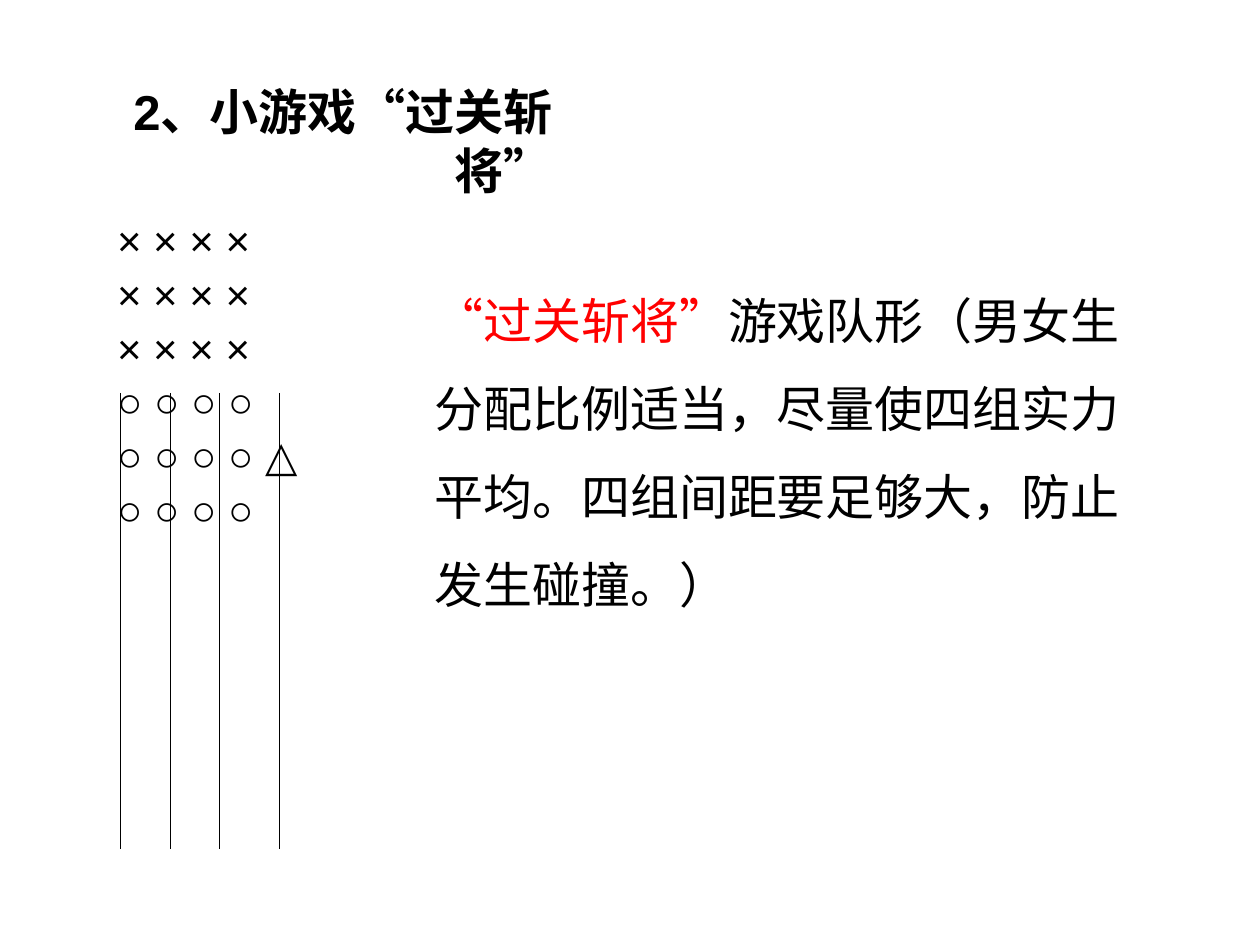
from typing import NamedTuple

from pptx import Presentation
from pptx.dml.color import RGBColor
from pptx.enum.lang import MSO_LANGUAGE_ID
from pptx.enum.shapes import MSO_CONNECTOR
from pptx.enum.text import PP_ALIGN
from pptx.oxml.ns import qn
from pptx.slide import Slide
from pptx.util import Cm, Pt

CHINESE = MSO_LANGUAGE_ID.SIMPLIFIED_CHINESE
STRAIGHT = MSO_CONNECTOR.STRAIGHT
LEFT = PP_ALIGN.LEFT
RIGHT = PP_ALIGN.RIGHT
BLACK = "000000"
RED = "FF0000"
LANE_TOP, LANE_BOTTOM = 7.92, 17.12
LANE_POSITIONS = (2.43, 3.43, 4.43, 5.63)


class Box(NamedTuple):
    left: float
    top: float
    width: float
    height: float


class Run(NamedTuple):
    text: str
    color: str = BLACK


def rgb(color: str) -> RGBColor:
    return RGBColor.from_string(color)


def add_text(slide: Slide, box: Box, paragraphs: list[list[Run]], *, size: float,
             font_name: str = "Arial", bold: bool = False, align: PP_ALIGN = LEFT,
             line_spacing: float = 1.0, space_before: float = 0) -> None:
    shape = slide.shapes.add_textbox(*(Cm(length) for length in box))
    frame = shape.text_frame
    frame.word_wrap = True
    for index, runs in enumerate(paragraphs):
        paragraph = frame.add_paragraph() if index else frame.paragraphs[0]
        paragraph.alignment = align
        paragraph.line_spacing = line_spacing
        paragraph.space_before = Pt(space_before if index else 0)
        for item in runs:
            run = paragraph.add_run()
            run.text = item.text
            run.font.size = Pt(size)
            run.font.name = font_name
            run.font.bold = bold
            run.font.language_id = CHINESE
            run.font.color.rgb = rgb(item.color)


def add_lane(slide: Slide, position: float) -> None:
    lane = slide.shapes.add_connector(
        STRAIGHT, Cm(position), Cm(LANE_TOP), Cm(position), Cm(LANE_BOTTOM))
    lane.line.color.rgb = rgb(BLACK)
    lane.line.width = Pt(0.75)
    properties = lane._element.spPr
    properties.append(properties.makeelement(qn("a:effectLst"), {}))


def main() -> None:
    presentation = Presentation()
    presentation.slide_width = Cm(25.4)
    presentation.slide_height = Cm(19.05)
    slide = presentation.slides.add_slide(presentation.slide_layouts[6])

    crosses, circles = "× × × ×", "○ ○ ○ ○"
    formation = [crosses] * 3 + [circles, f"{circles} △", circles]
    add_text(slide, Box(2.11, 4.32, 22.86, 12.57), [[Run(row)] for row in formation],
             size=24, line_spacing=0.9, space_before=4.8)

    explanation = [
        Run("“过关斩将”", RED),
        Run("游戏队形（男女生分配比例适当，尽量使四组实力平均。四组间距要足够大，防止发生碰撞。）"),
    ]
    add_text(slide, Box(8.51, 5.13, 14.53, 7.37), [explanation],
             size=28, font_name="Times New Roman", line_spacing=1.5)

    for position in LANE_POSITIONS:
        add_lane(slide, position)

    add_text(slide, Box(1.3, 1.52, 10.08, 1.45), [[Run("2、小游戏“过关斩将”")]],
             size=28, bold=True, align=RIGHT)
    presentation.save("out.pptx")


if __name__ == "__main__":
    main()
